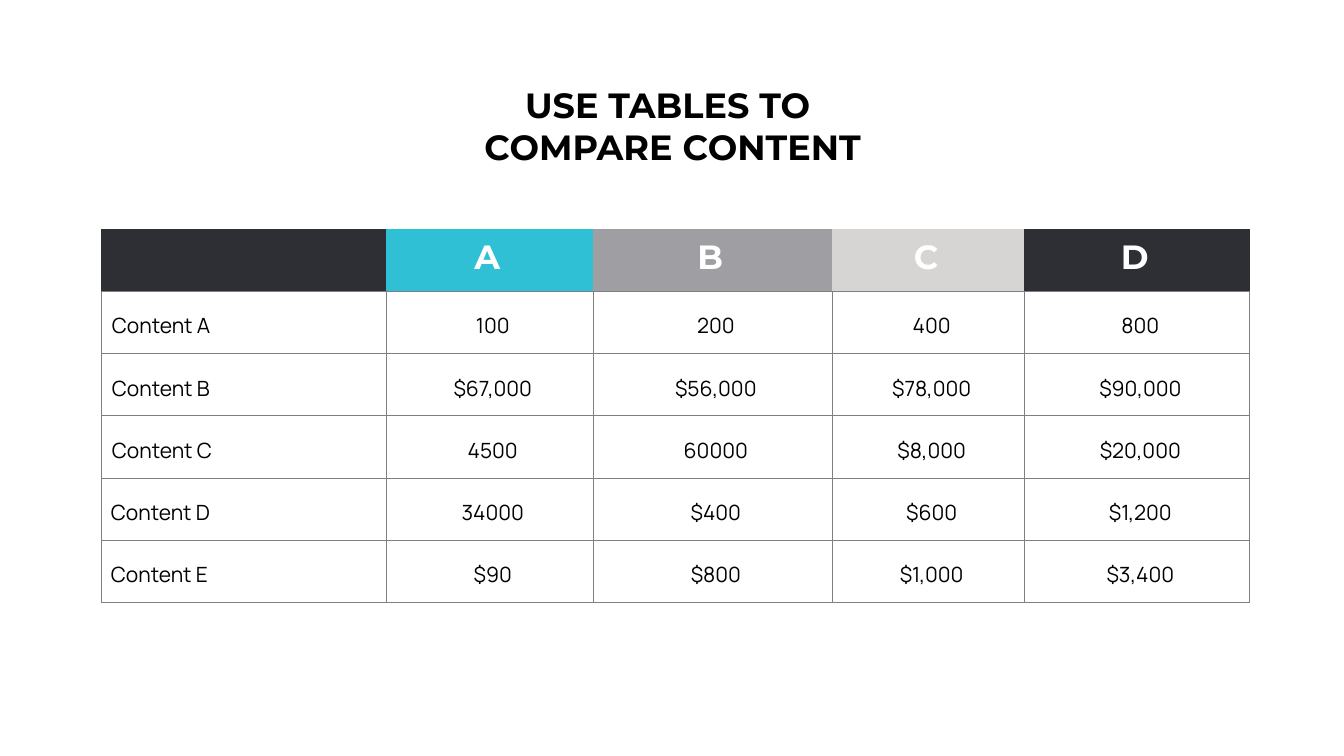
from lxml.etree import SubElement
from pptx import Presentation
from pptx.dml.color import RGBColor
from pptx.enum.text import PP_ALIGN
from pptx.oxml.ns import qn
from pptx.util import Cm, Pt

COLORS = {
    "dark": "2E2E35", "cyan": "2FC0D6", "gray": "9F9EA2", "light": "D7D5D4",
    "white": "FFFFFF", "black": "000000", "border": "7F7F7F",
}
HEADERS = [("", "dark"), ("A", "cyan"), ("B", "gray"), ("C", "light"), ("D", "dark")]
ROWS = [
    ["Content A", "100", "200", "400", "800"],
    ["Content B", "$67,000", "$56,000", "$78,000", "$90,000"],
    ["Content C", "4500", "60000", "$8,000", "$20,000"],
    ["Content D", "34000", "$400", "$600", "$1,200"],
    ["Content E", "$90", "$800", "$1,000", "$3,400"],
]
COLUMN_WIDTHS = [14.38, 10.41, 12.07, 9.68, 11.35]
ROW_HEIGHT = 3.14


def write(para, text, font="Manrope", size=30, color="black", bold=False,
          align=PP_ALIGN.CENTER):
    para.alignment = align
    span = para.add_run()
    span.text = text
    span.font.name = font
    span.font.size = Pt(size)
    span.font.bold = bold
    span.font.color.rgb = RGBColor.from_string(COLORS[color])


def style_cell(cell, fill, insets, sides):
    (cell.margin_left, cell.margin_top,
     cell.margin_right, cell.margin_bottom) = [Cm(inset) for inset in insets]
    # Borders come before the fill in the cell properties
    properties = cell._tc.get_or_add_tcPr()
    for side in "LRTB":
        line = SubElement(properties, qn(f"a:ln{side}"), w=str(Pt(1)))
        if side in sides:
            solid = SubElement(line, qn("a:solidFill"))
            SubElement(solid, qn("a:srgbClr"), val=COLORS["border"])
        else:
            SubElement(line, qn("a:noFill"))
    cell.fill.solid()
    cell.fill.fore_color.rgb = RGBColor.from_string(COLORS[fill])


deck = Presentation()
deck.slide_width, deck.slide_height = Cm(67.72), Cm(38.1)
page = deck.slides.add_slide(deck.slide_layouts[6])

# Table grid
table = page.shapes.add_table(
    len(ROWS) + 1, len(HEADERS), Cm(5.08), Cm(11.53),
    Cm(sum(COLUMN_WIDTHS)), Cm(ROW_HEIGHT * (len(ROWS) + 1))).table
table.horz_banding = False
for column, width in zip(table.columns, COLUMN_WIDTHS):
    column.width = Cm(width)
for row in table.rows:
    row.height = Cm(ROW_HEIGHT)

# Header row
for column, (label, fill) in enumerate(HEADERS):
    cell = table.cell(0, column)
    style_cell(cell, fill, (0, 0.43, 0.23, 0), "B")
    if label:
        write(cell.text_frame.paragraphs[0], label, font="Montserrat", size=48,
              color="white", bold=True)

# Body rows
for row, values in enumerate(ROWS, start=1):
    for column, value in enumerate(values):
        cell = table.cell(row, column)
        narrow = column == 0 and row >= 4
        insets = (0.51, 1.02, 0, 0.1) if narrow else (0.56, 1.02, 0.23, 0.1)
        style_cell(cell, "white", insets, "LRTB")
        write(cell.text_frame.paragraphs[0], value,
              align=PP_ALIGN.CENTER if column else PP_ALIGN.LEFT)

# Title
box = page.shapes.add_textbox(Cm(12.65), Cm(4.09), Cm(42.49), Cm(4.52))
frame = box.text_frame
frame.word_wrap = True
frame.add_paragraph()
for para, text in zip(frame.paragraphs, ["USE TABLES TO ", "COMPARE CONTENT"]):
    write(para, text, font="Montserrat", size=50, bold=True)

deck.save("out.pptx")
